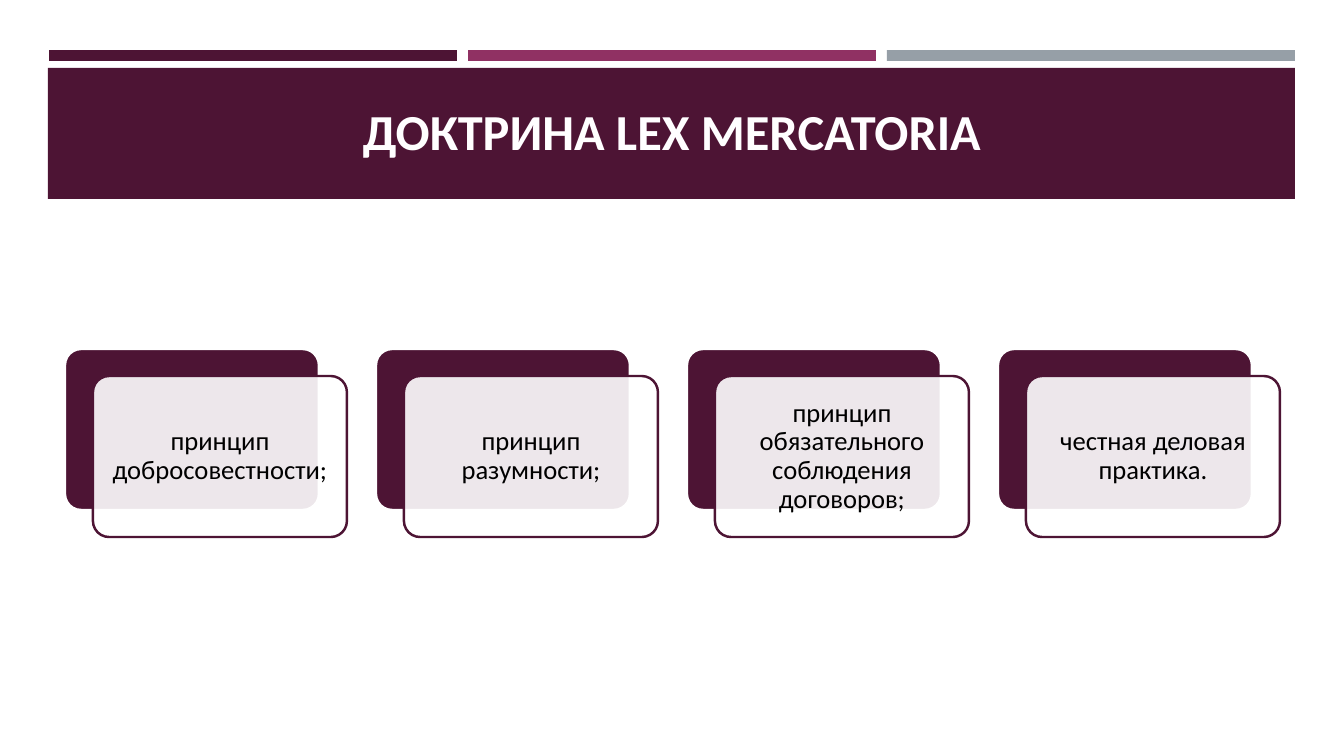
from lxml import etree
from pptx import Presentation
from pptx.dml.color import RGBColor
from pptx.enum.shapes import MSO_SHAPE
from pptx.enum.text import MSO_ANCHOR, PP_ALIGN
from pptx.oxml.ns import qn
from pptx.util import Emu, Pt

RECT, ROUND = MSO_SHAPE.RECTANGLE, MSO_SHAPE.ROUNDED_RECTANGLE
MIDDLE, BOTTOM = MSO_ANCHOR.MIDDLE, MSO_ANCHOR.BOTTOM
CENTER = PP_ALIGN.CENTER

PLUM = RGBColor(0x4D, 0x14, 0x34)
MAGENTA = RGBColor(0x90, 0x31, 0x63)
GREY = RGBColor(0x96, 0x9F, 0xA7)
WHITE = RGBColor(0xFF, 0xFF, 0xFF)
OFF_WHITE = RGBColor(0xFF, 0xFE, 0xFF)
BLACK = RGBColor(0x00, 0x00, 0x00)

PRINCIPLES = [
    "принцип добросовестности;",
    "принцип разумности;",
    "принцип обязательного соблюдения договоров;",
    "честная деловая практика.",
]


def px(n):
    return Emu(round(n * 914400 / 100.8))


class Deck:
    font = "Calibri"

    def __init__(self):
        self.prs = Presentation()
        self.prs.slide_width, self.prs.slide_height = px(1344), px(756)
        self.s = self.prs.slides.add_slide(self.prs.slide_layouts[6])

    def box(self, kind, x, y, w, h, fill, line=None):
        sp = self.s.shapes.add_shape(kind, px(x), px(y), px(w), px(h))
        sp.shadow.inherit = False
        sp.fill.solid()
        sp.fill.fore_color.rgb = fill
        if line is None:
            sp.line.fill.background()
        else:
            sp.line.color.rgb = line
            sp.line.width = Pt(1.75)
        if kind == ROUND:
            sp.adjustments[0] = 0.1
        return sp

    def label(self, sp, text, size, color, anchor, insets, bold=False, spacing=1.0):
        tf = sp.text_frame
        tf.word_wrap = True
        tf.vertical_anchor = anchor
        tf.margin_left, tf.margin_top, tf.margin_right, tf.margin_bottom = map(px, insets)
        p = tf.paragraphs[0]
        p.text = text
        p.alignment = CENTER
        p.line_spacing = spacing
        p.font.name = self.font
        p.font.size = Pt(size)
        p.font.bold = bold
        p.font.color.rgb = color

    def title(self, x, y, w, h, text):
        sp = self.s.shapes.add_textbox(px(x), px(y), px(w), px(h))
        self.label(sp, text, 36, OFF_WHITE, BOTTOM, (10, 5, 20, 5), bold=True)

    def card(self, x, y, text):
        self.box(ROUND, x, y, 254, 161, PLUM, WHITE)
        sp = self.box(ROUND, x + 28, y + 27, 254, 161, WHITE, PLUM)
        color = sp.element.spPr.find(qn("a:solidFill"))[0]
        etree.SubElement(color, qn("a:alpha"), val="90000")
        self.label(sp, text, 19, BLACK, MIDDLE, (8, 8, 8, 8), spacing=0.9)


def main():
    deck = Deck()
    for i, color in enumerate((PLUM, MAGENTA, GREY)):
        deck.box(RECT, 49 + i * 419, 50, 408, 11, color)
    deck.box(RECT, 48, 68, 1247, 131, PLUM)
    deck.title(69, 54, 1216, 112, "ДОКТРИНА LEX MERCATORIA")
    for i, text in enumerate(PRINCIPLES):
        deck.card(65 + i * 311, 349, text)
    deck.prs.save("out.pptx")


if __name__ == "__main__":
    main()
